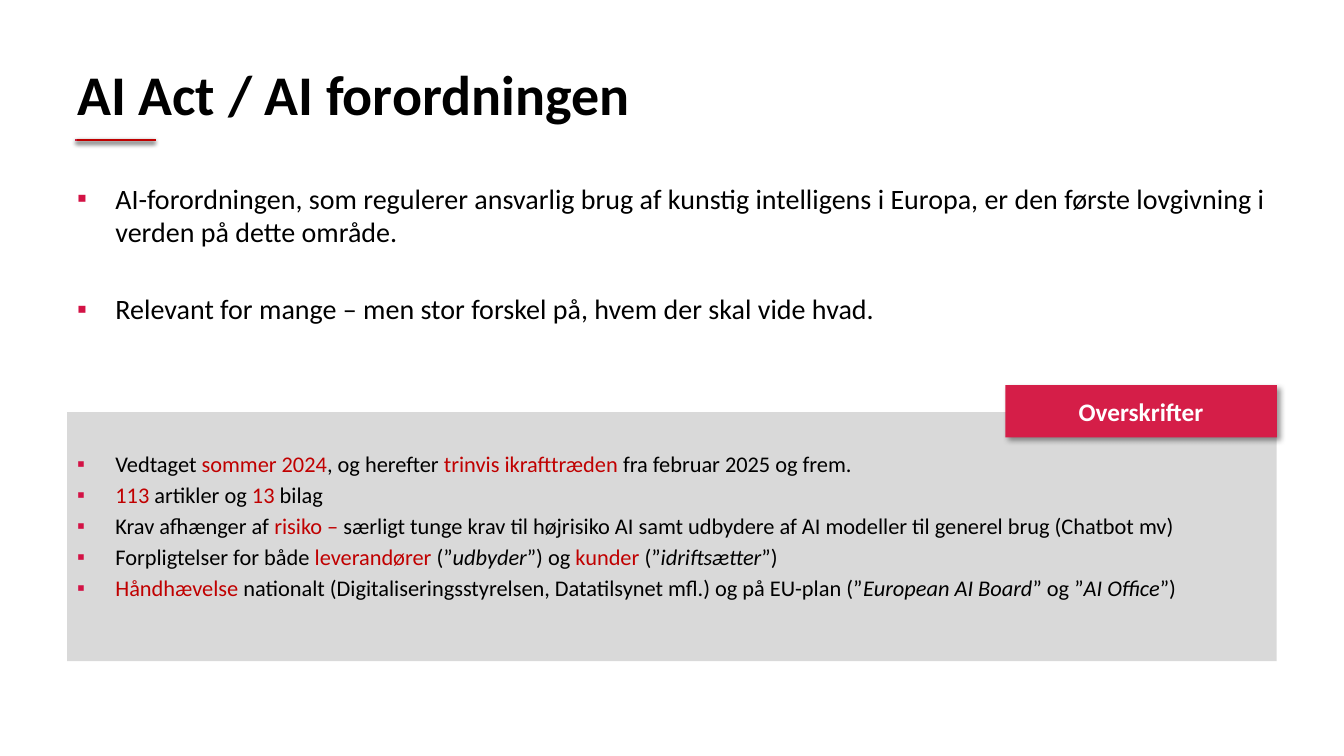
from lxml import etree
from pptx import Presentation
from pptx.dml.color import RGBColor
from pptx.enum.shapes import MSO_CONNECTOR, MSO_SHAPE
from pptx.enum.text import MSO_ANCHOR, PP_ALIGN
from pptx.oxml.ns import qn
from pptx.util import Inches, Pt

RECTANGLE = MSO_SHAPE.RECTANGLE
STRAIGHT = MSO_CONNECTOR.STRAIGHT
TOP, MIDDLE = MSO_ANCHOR.TOP, MSO_ANCHOR.MIDDLE
LEFT, CENTER = PP_ALIGN.LEFT, PP_ALIGN.CENTER

BLACK = RGBColor(0x00, 0x00, 0x00)
WHITE = RGBColor(0xFF, 0xFF, 0xFF)
GREY = RGBColor(0xD9, 0xD9, 0xD9)
RED = RGBColor(0xC0, 0x00, 0x00)
CRIMSON = RGBColor(0xD5, 0x1E, 0x48)
RULE_RED = RGBColor(0xD0, 0x24, 0x48)
BULLET_RED = RGBColor(0xD3, 0x12, 0x45)

TITLE_ONLY = 5
COLUMNS, ROWS = 20, 30
MARGIN, CONTENT = 1, 18
RULE_ROW = 5.56

ACCENT = {"color": RED}
ITALIC = {"italic": True}

INTRO = [
    [("AI-forordningen, som regulerer ansvarlig brug af kunstig intelligens i Europa, "
      "er den første lovgivning i verden på dette område.", {})],
    [("Relevant for mange – men stor forskel på, hvem der skal vide hvad.", {})],
]
HEADLINES = [
    [("Vedtaget ", {}), ("sommer 2024", ACCENT), (", og herefter ", {}),
     ("trinvis ikrafttræden ", ACCENT), ("fra februar 2025 og frem.", {})],
    [("113 ", ACCENT), ("artikler og ", {}), ("13", ACCENT), (" bilag", {})],
    [("Krav afhænger af ", {}), ("risiko – ", ACCENT),
     ("særligt tunge krav til højrisiko AI samt udbydere af AI modeller "
      "til generel brug (Chatbot mv)", {})],
    [("Forpligtelser for både ", {}), ("leverandører ", ACCENT), ("(”", {}),
     ("udbyder", ITALIC), ("”) og ", {}), ("kunder", ACCENT), (" (”", {}),
     ("idriftsætter", ITALIC), ("”)", {})],
    [("Håndhævelse", ACCENT),
     (" nationalt (Digitaliseringsstyrelsen, Datatilsynet mfl.) og på EU-plan (”", {}),
     ("European AI Board", ITALIC), ("” og ”", {}), ("AI Office", ITALIC), ("”)", {})],
]


def write(para, text, size=20, color=BLACK, bold=False, italic=False, font="Calibri"):
    span = para.add_run()
    span.text = text
    span.font.name = font
    span.font.size = Pt(size)
    span.font.color.rgb = color
    span.font.bold = bold
    span.font.italic = italic


def add_bullet(para):
    properties = para._p.get_or_add_pPr()
    properties.set("marL", str(Inches(0.38)))
    properties.set("indent", str(-Inches(0.38)))
    tint = etree.SubElement(properties, qn("a:buClr"))
    etree.SubElement(tint, qn("a:srgbClr"), val=str(BULLET_RED))
    etree.SubElement(properties, qn("a:buFont"), typeface="Arial")
    etree.SubElement(properties, qn("a:buChar"), char="▪")


def cast_shadow(effects, blur, distance, angle, opacity):
    shadow = etree.SubElement(
        effects, qn("a:outerShdw"), blurRad=str(Pt(blur)), dist=str(Pt(distance)),
        dir=str(angle * 60000), algn="ctr", rotWithShape="0")
    tint = etree.SubElement(shadow, qn("a:srgbClr"), val=str(BLACK))
    etree.SubElement(tint, qn("a:alpha"), val=str(opacity * 1000))


class SlideBuilder:
    def __init__(self, deck):
        self.column = deck.slide_width / COLUMNS
        self.row = deck.slide_height / ROWS
        self.page = deck.slides.add_slide(deck.slide_layouts[TITLE_ONLY])

    def place(self, column, row, columns, rows):
        return (round(column * self.column), round(row * self.row),
                round(columns * self.column), round(rows * self.row))

    def title(self, text, *area):
        box = self.page.shapes.title
        box.left, box.top, box.width, box.height = self.place(*area)
        box.text_frame.vertical_anchor = MIDDLE
        para = box.text_frame.paragraphs[0]
        para.alignment = LEFT
        write(para, text, size=40, bold=True)

    def rule(self, start, end, row, color):
        left, top, right, _ = self.place(start, row, end, 0)
        line = self.page.shapes.add_connector(STRAIGHT, left, top, right, top)
        line.line.color.rgb = color
        line.line.width = Pt(2)
        effects = etree.SubElement(line._element.spPr, qn("a:effectLst"))
        cast_shadow(effects, blur=3.1, distance=1.6, angle=90, opacity=38)

    def panel(self, color, *area):
        box = self.page.shapes.add_shape(RECTANGLE, *self.place(*area))
        box.shadow.inherit = False
        box.fill.solid()
        box.fill.fore_color.rgb = color
        box.line.fill.background()
        return box

    def text_box(self, *area):
        return self.page.shapes.add_textbox(*self.place(*area))

    def bullets(self, box, items, size, gap, inset=0.05):
        frame = box.text_frame
        frame.word_wrap = True
        frame.vertical_anchor = TOP
        frame.margin_top = Inches(inset)
        for index, item in enumerate(items):
            para = frame.add_paragraph() if index else frame.paragraphs[0]
            add_bullet(para)
            para.alignment = LEFT
            if index:
                para.space_before = Pt(gap)
            for text, style in item:
                write(para, text, size=size, **style)

    def tag(self, text, *area):
        box = self.panel(CRIMSON, *area)
        effects = box._element.spPr.find(qn("a:effectLst"))
        cast_shadow(effects, blur=4, distance=3, angle=45, opacity=40)
        box.text_frame.vertical_anchor = MIDDLE
        para = box.text_frame.paragraphs[0]
        para.alignment = CENTER
        write(para, text, size=18, color=WHITE, bold=True)


def main():
    deck = Presentation()
    deck.slide_width, deck.slide_height = Inches(13.33), Inches(7.5)
    slide = SlideBuilder(deck)
    slide.rule(1.12, 2.3, RULE_ROW, RULE_RED)
    slide.bullets(slide.text_box(MARGIN, 7, CONTENT, 8), INTRO, size=20, gap=31)
    slide.title("AI Act / AI forordningen", MARGIN, 1.2, CONTENT, 5)
    slide.rule(1.14, 2.32, RULE_ROW, RED)
    panel = slide.panel(GREY, MARGIN, 16.36, CONTENT, 9.88)
    slide.bullets(panel, HEADLINES, size=16, gap=2.9, inset=0.38)
    slide.tag("Overskrifter", 14.96, 15.28, 4.04, 2.08)
    deck.save("out.pptx")


if __name__ == "__main__":
    main()
